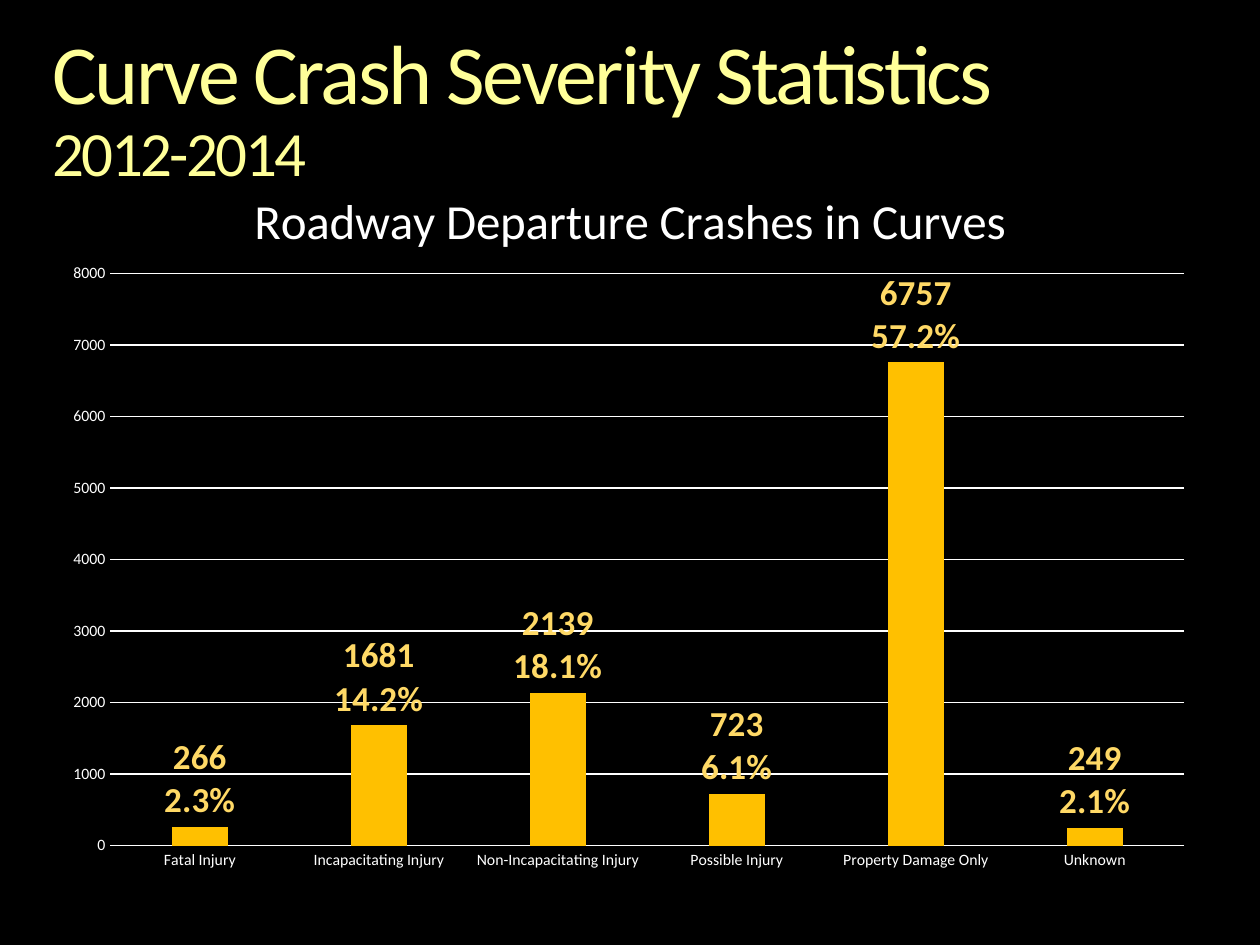
from lxml import etree
from pptx import Presentation
from pptx.chart.data import CategoryChartData
from pptx.dml.color import RGBColor
from pptx.enum.chart import XL_CHART_TYPE as ChartType, XL_LABEL_POSITION as LabelPos
from pptx.enum.chart import XL_TICK_MARK as Tick
from pptx.enum.text import MSO_ANCHOR as Anchor, PP_ALIGN as Align
from pptx.oxml import parse_xml
from pptx.oxml.ns import nsdecls, qn
from pptx.util import Cm, Pt

BLACK = RGBColor(0x00, 0x00, 0x00)
WHITE = RGBColor(0xFF, 0xFF, 0xFF)
PALE_YELLOW = RGBColor(0xFF, 0xFF, 0x99)
AMBER = RGBColor(0xFF, 0xC0, 0x00)
LIGHT_AMBER = RGBColor(0xFF, 0xD9, 0x66)
FONT = "Calibri"
CRASHES = {
    "Fatal Injury": 266,
    "Incapacitating Injury": 1681,
    "Non-Incapacitating Injury": 2139,
    "Possible Injury": 723,
    "Property Damage Only": 6757,
    "Unknown": 249,
}


def set_font(font, size, color, bold=False):
    """Give a font its face, size, colour and weight."""
    font.name, font.size, font.bold = FONT, Pt(size), bold
    font.color.rgb = color


def add_title(s, left, top, width, height):
    """Place the two-line slide title in its placeholder."""
    sp = s.shapes.title
    sp.left, sp.top, sp.width, sp.height = left, top, width, height
    tf = sp.text_frame
    tf.margin_left = tf.margin_top = tf.margin_right = tf.margin_bottom = 0
    tf.vertical_anchor = Anchor.TOP
    tf.word_wrap = True
    p = tf.paragraphs[0]
    p.alignment, p.line_spacing = Align.LEFT, 0.9
    for i, (text, size) in enumerate([("Curve Crash Severity Statistics", 48), ("2012-2014", 36)]):
        if i:
            p.add_line_break()
        r = p.add_run()
        r.text = text
        set_font(r.font, size, PALE_YELLOW)
        r.font._element.set("spc", "-150")


def set_plot_area(chart, **fractions):
    """Fix the inner plot area as fractions of the chart box."""
    plot_area = chart._chartSpace.chart.plotArea
    for old in plot_area.findall(qn("c:layout")):
        plot_area.remove(old)
    layout = parse_xml(f"<c:layout {nsdecls('c')}><c:manualLayout/></c:layout>")
    settings = {"layoutTarget": "inner", "xMode": "edge", "yMode": "edge", **fractions}
    for tag, value in settings.items():
        etree.SubElement(layout[0], qn(f"c:{tag}")).set("val", str(value))
    plot_area.insert(0, layout)


def format_axes(chart):
    """Style both axes and the gridlines."""
    for axis in (chart.category_axis, chart.value_axis):
        axis.major_tick_mark = axis.minor_tick_mark = Tick.NONE
        set_font(axis.tick_labels.font, 9, WHITE)
    values = chart.value_axis
    values.minimum_scale, values.maximum_scale, values.major_unit = 0, 8000, 1000
    values.format.line.fill.background()
    for line in (chart.category_axis.format.line, values.major_gridlines.format.line):
        line.color.rgb, line.width = WHITE, Pt(0.75)


def label_columns(series):
    """Label each column with its count and its share of the total."""
    labels = series.data_labels
    labels.show_value, labels.position = True, LabelPos.OUTSIDE_END
    set_font(labels.font, 20, LIGHT_AMBER, True)
    total = sum(series.values)
    for i, count in enumerate(series.values):
        label = series.points[i].data_label
        tf = label.text_frame
        for j, text in enumerate((f"{count:.0f}", f"{count / total:.1%}")):
            p = tf.add_paragraph() if j else tf.paragraphs[0]
            r = p.add_run()
            r.text = text
            set_font(r.font, 20, LIGHT_AMBER, True)
        label.position = LabelPos.OUTSIDE_END


def add_severity_chart(s, left, top, width, height):
    """Place the column chart of crashes by severity."""
    data = CategoryChartData()
    data.categories = list(CRASHES)
    data.add_series("Series 1", list(CRASHES.values()))
    chart = s.shapes.add_chart(ChartType.COLUMN_CLUSTERED, left, top, width, height, data).chart
    set_font(chart.font, 10, WHITE)
    chart.has_legend = False
    chart.has_title = True
    r = chart.chart_title.text_frame.paragraphs[0].add_run()
    r.text = "Roadway Departure Crashes in Curves"
    set_font(r.font, 28, WHITE)
    chart.chart_title.include_in_layout = False
    set_plot_area(chart, x=0.05, y=0.16, w=0.93, h=0.79)
    format_axes(chart)
    plot = chart.plots[0]
    plot.gap_width, plot.overlap, plot.vary_by_categories = 219, -27, False
    series = plot.series[0]
    series.format.fill.solid()
    series.format.fill.fore_color.rgb = AMBER
    label_columns(series)


def main():
    """Build and save the slide."""
    prs = Presentation()
    prs.slide_width, prs.slide_height = Cm(25.4), Cm(19.05)
    s = prs.slides.add_slide(prs.slide_layouts[5])
    s.background.fill.solid()
    s.background.fill.fore_color.rgb = BLACK
    left, width = Cm(1.06), Cm(23.28)
    add_title(s, left, Cm(0.64), width, Cm(3.23))
    add_severity_chart(s, left, Cm(3.18), width, Cm(14.6))
    prs.save("out.pptx")


if __name__ == "__main__":
    main()
